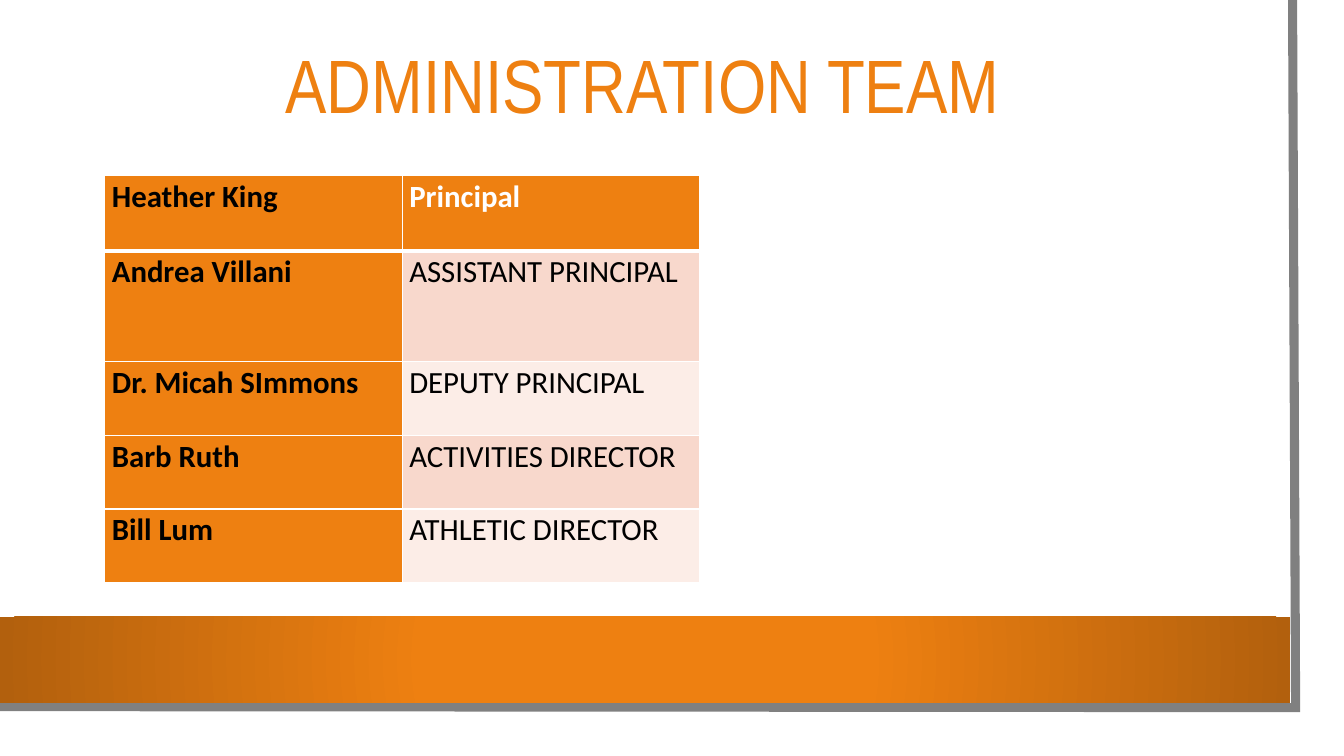
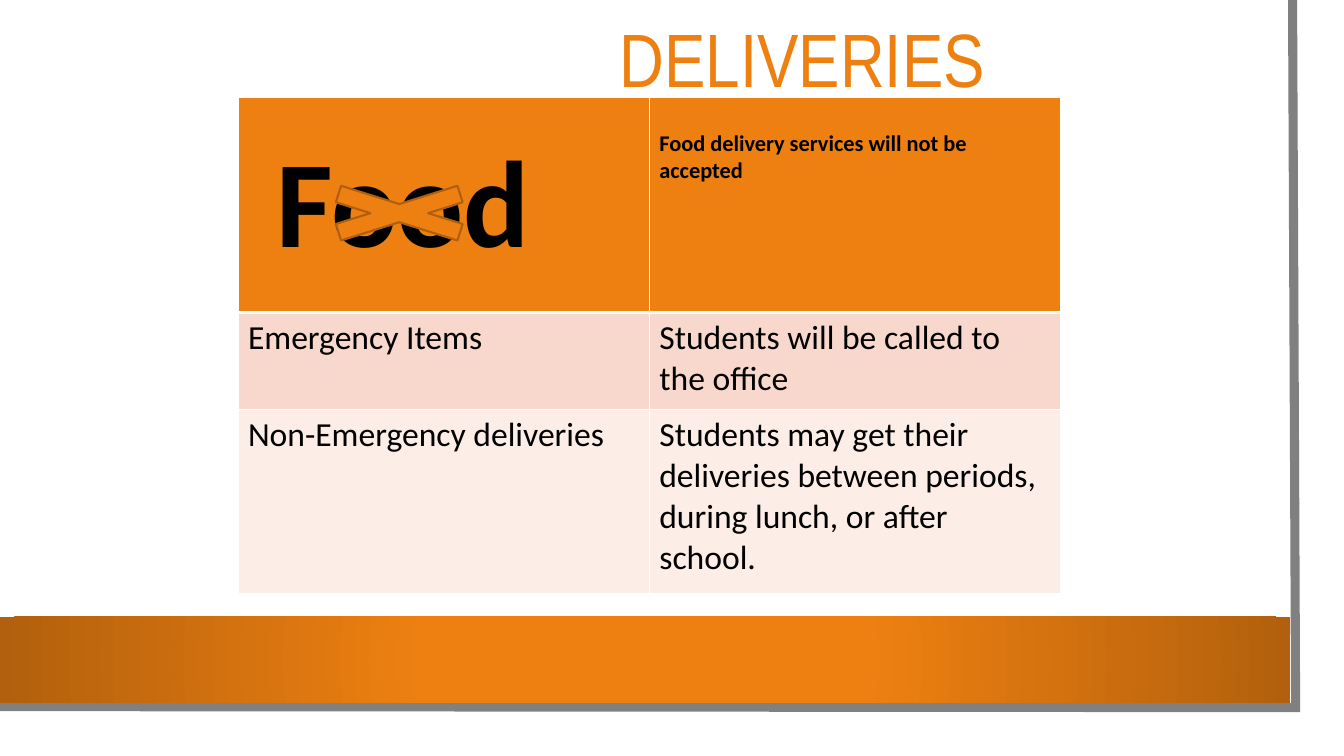
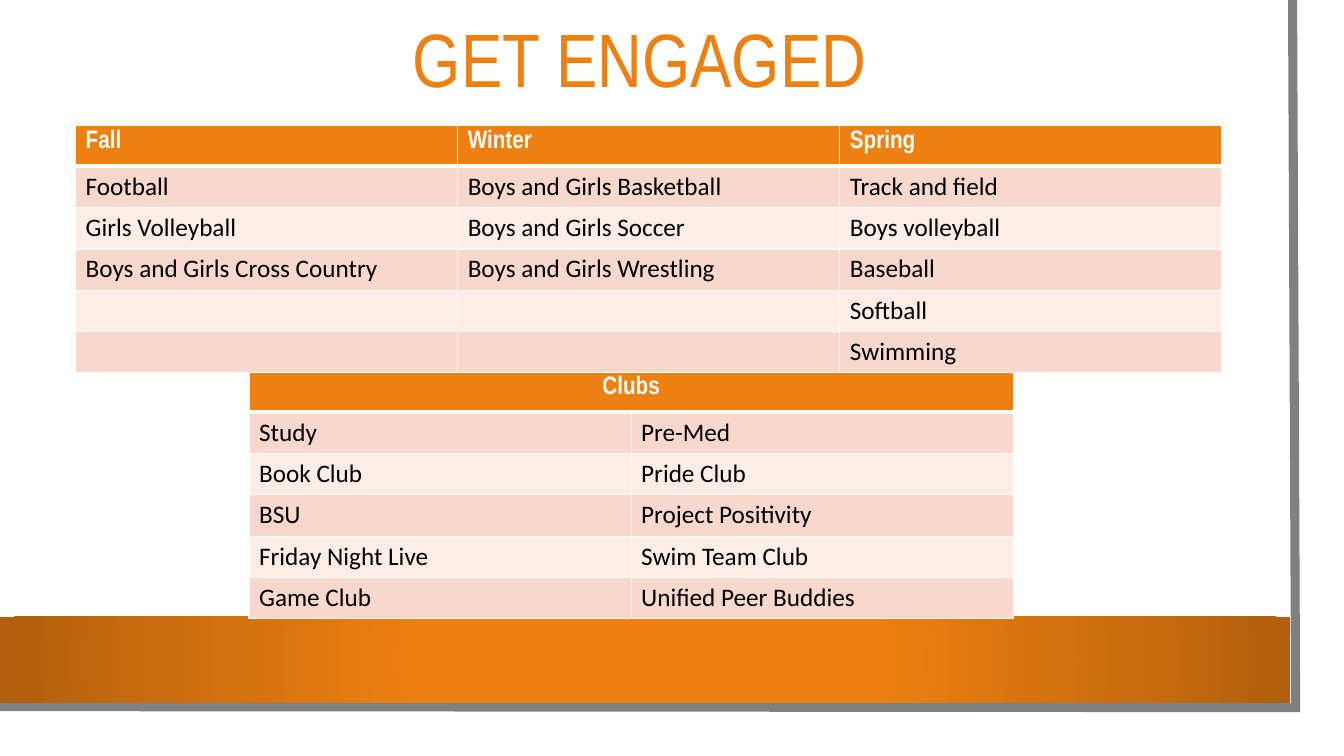
from lxml.etree import SubElement
from pptx import Presentation
from pptx.dml.color import RGBColor
from pptx.enum.shapes import MSO_SHAPE
from pptx.enum.text import MSO_ANCHOR, PP_ALIGN
from pptx.oxml import parse_xml
from pptx.oxml.ns import nsdecls, qn
from pptx.util import Inches, Pt

ORANGE = "EE8011"
DARK_ORANGE = "B2600D"
CROSS_LINE = "B05F0D"
BANDS = ("F8D8CC", "FCEDE7")
GREY = "808080"
BLACK = "000000"
WHITE = "FFFFFF"

TITLE_FORMAT = {"name": "Arial Narrow", "size": Pt(54), "color": ORANGE}
HEADER_FORMAT = {"name": "Arial Narrow", "size": Pt(18), "bold": True, "color": WHITE}
BODY_FORMAT = {"name": "Calibri", "size": Pt(18), "bold": False, "color": BLACK}

TEAM = [
    ("Heather King", "Principal"),
    ("Andrea Villani", "ASSISTANT PRINCIPAL"),
    ("Dr. Micah SImmons", "DEPUTY PRINCIPAL"),
    ("Barb Ruth", "ACTIVITIES DIRECTOR"),
    ("Bill Lum", "ATHLETIC DIRECTOR"),
]
DELIVERIES = [
    ("Food", "Food delivery services will not be accepted"),
    ("Emergency Items", "Students will be called to the office"),
    ("Non-Emergency deliveries",
     "Students may get their deliveries between periods, during lunch, or after school."),
]
SPORTS = [
    ("Fall", "Winter", "Spring"),
    ("Football", "Boys and Girls Basketball", "Track and field"),
    ("Girls Volleyball", "Boys and Girls Soccer", "Boys volleyball"),
    ("Boys and Girls Cross Country", "Boys and Girls Wrestling", "Baseball"),
    ("", "", "Softball"),
    ("", "", "Swimming"),
]
CLUBS = [
    ("Clubs", ""),
    ("Study", "Pre-Med"),
    ("Book Club", "Pride Club"),
    ("BSU", "Project Positivity"),
    ("Friday Night Live", "Swim Team Club"),
    ("Game Club", "Unified Peer Buddies"),
]


def rgb(value):
    return RGBColor.from_string(value)


def format_font(font, values):
    for name, value in values.items():
        if name == "color":
            font.color.rgb = rgb(value)
        else:
            setattr(font, name, value)


def write_text(paragraph, text, values):
    run = paragraph.add_run()
    run.text = text
    format_font(run.font, values)


def format_shape(shape, fill=None, line=None, line_width=1):
    shape.shadow.inherit = False
    if fill:
        shape.fill.solid()
        shape.fill.fore_color.rgb = rgb(fill)
    else:
        shape.fill.background()
    if line:
        shape.line.color.rgb = rgb(line)
        shape.line.width = Pt(line_width)
    else:
        shape.line.fill.background()


def add_preset(slide, kind, box, **colours):
    shape = slide.shapes.add_shape(kind, *map(Inches, box))
    format_shape(shape, **colours)
    return shape


def fill_with_radial_gradient(shape):
    """Replace the fill by a gradient that darkens away from the centre."""
    properties = shape.fill._xPr
    solid = properties.find(qn("a:solidFill"))
    gradient = parse_xml(
        f'<a:gradFill {nsdecls("a")} rotWithShape="1"><a:gsLst>'
        f'<a:gs pos="34000"><a:srgbClr val="{ORANGE}"/></a:gs>'
        f'<a:gs pos="100000"><a:srgbClr val="{DARK_ORANGE}"/></a:gs></a:gsLst>'
        '<a:path path="circle"><a:fillToRect l="50000" t="50000" r="50000" b="50000"/>'
        '</a:path></a:gradFill>')
    properties.replace(solid, gradient)


def add_background(slide):
    """White page, grey edge on the right and bottom, orange band."""
    add_preset(slide, MSO_SHAPE.RECTANGLE, (0, 0, 13.1, 7.27), fill=WHITE)
    builder = slide.shapes.build_freeform(Inches(12.82), 0)
    builder.add_line_segments(
        [(Inches(12.85), Inches(7.02)), (Inches(-0.03), Inches(7.01))], close=False)
    edge = builder.convert_to_shape()
    format_shape(edge, line=GREY, line_width=6.5)
    SubElement(edge.line._get_or_add_ln(), qn("a:miter")).set("lim", "800000")
    band = add_preset(slide, MSO_SHAPE.RECTANGLE, (0, 6.12, 12.8, 0.85), fill=ORANGE)
    fill_with_radial_gradient(band)


def add_title(slide, text, left, top, alignment=PP_ALIGN.CENTER, indent=0):
    box = slide.shapes.add_textbox(*map(Inches, (left, top, 11.37, 1.26)))
    frame = box.text_frame
    frame.word_wrap = True
    frame.vertical_anchor = MSO_ANCHOR.MIDDLE
    paragraph = frame.paragraphs[0]
    paragraph.alignment = alignment
    paragraph.line_spacing = 0.9
    if indent:
        paragraph._p.get_or_add_pPr().set("marL", str(Inches(indent)))
    write_text(paragraph, text, TITLE_FORMAT)


def set_borders(cell, top, bottom):
    properties = cell._tc.get_or_add_tcPr()
    for side, width in (("L", 1), ("R", 1), ("T", top), ("B", bottom)):
        line = SubElement(properties, qn(f"a:ln{side}"), w=str(Pt(width)))
        fill = SubElement(line, qn("a:solidFill"))
        SubElement(fill, qn("a:srgbClr"), val=WHITE)


def add_banded_table(slide, left, top, column_width, row_heights, rows,
                     header=None, body=None, name_column=False):
    """Draw rows under an orange header; name_column makes the first column orange too."""
    column_count = len(rows[0])
    frame = slide.shapes.add_table(
        len(rows), column_count, Inches(left), Inches(top),
        Inches(column_width * column_count), Inches(sum(row_heights)))
    table = frame.table
    table.first_row = table.horz_banding = False
    for column in table.columns:
        column.width = Inches(column_width)
    for row_index, (height, texts) in enumerate(zip(row_heights, rows)):
        table.rows[row_index].height = Inches(height)
        for column_index, text in enumerate(texts):
            cell = table.cell(row_index, column_index)
            is_header = row_index == 0
            is_name = name_column and column_index == 0
            set_borders(cell, 3 if row_index == 1 else 1, 3 if is_header else 1)
            cell.fill.solid()
            fill = ORANGE if is_header or is_name else BANDS[(row_index - 1) % 2]
            cell.fill.fore_color.rgb = rgb(fill)
            values = HEADER_FORMAT | (header or {}) if is_header else BODY_FORMAT | (body or {})
            if is_name:
                values = values | {"bold": True, "color": BLACK}
            if text:
                write_text(cell.text_frame.paragraphs[0], text, values)
    return table


def add_team_slide(slide):
    add_title(slide, "ADMINISTRATION TEAM", 0.69, 0.25)
    table = add_banded_table(
        slide, 1.04, 1.74, 2.95, [0.75, 1.1, 0.73, 0.73, 0.73], TEAM,
        header={"name": "Calibri", "size": Pt(22)}, body={"size": Pt(22)}, name_column=True)
    for cell in table.iter_cells():
        cell.margin_left = cell.margin_right = Inches(0.07)
        cell.margin_top = cell.margin_bottom = 0
        cell.text_frame.paragraphs[0].line_spacing = 1.07


def add_deliveries_slide(slide):
    add_title(slide, "DELIVERIES", 0.62, 0, PP_ALIGN.LEFT, indent=5.43)
    table = add_banded_table(
        slide, 2.36, 0.97, 4.08, [2.13, 0.96, 1.83], DELIVERIES,
        header={"name": "Calibri", "size": Pt(16), "color": BLACK}, body={"size": Pt(24)})
    food, notice = table.rows[0].cells
    food.margin_top = notice.margin_top = Inches(0.32)
    food.margin_left = Inches(0.38)
    food.text_frame.paragraphs[0].runs[0].font.size = Pt(88)
    add_preset(slide, MSO_SHAPE.MATH_MULTIPLY, (2.8, 1.75, 2.32, 0.73),
               fill=ORANGE, line=CROSS_LINE, line_width=1.5)


def add_engaged_slide(slide):
    add_title(slide, "GET ENGAGED", 0.66, 0)
    row_height, column_width, sports_top = 0.41, 3.79, 1.24
    clubs_top = sports_top + row_height * len(SPORTS) - 0.02
    clubs = add_banded_table(slide, 2.47, clubs_top, column_width,
                             [row_height] * len(CLUBS), CLUBS)
    heading = clubs.cell(0, 0)
    heading.merge(clubs.cell(0, 1))
    heading.text_frame.paragraphs[0].alignment = PP_ALIGN.CENTER
    add_banded_table(slide, 0.75, sports_top, column_width,
                     [row_height] * len(SPORTS), SPORTS)


def main():
    presentation = Presentation()
    presentation.slide_width = Inches(13.33)
    presentation.slide_height = Inches(7.5)
    for add_content in (add_team_slide, add_deliveries_slide, add_engaged_slide):
        slide = presentation.slides.add_slide(presentation.slide_layouts[6])
        add_background(slide)
        add_content(slide)
    presentation.save("out.pptx")


if __name__ == "__main__":
    main()
